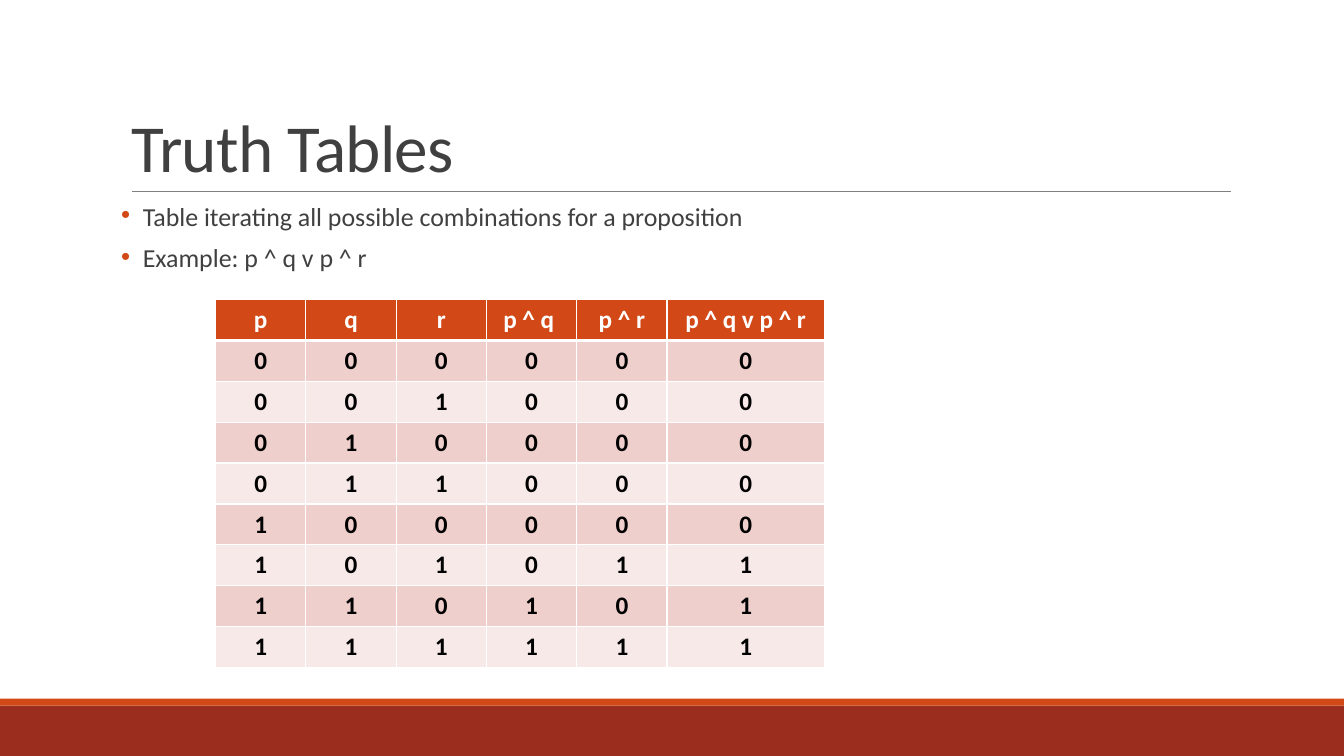
from itertools import product

from lxml import etree
from pptx import Presentation
from pptx.dml.color import RGBColor
from pptx.enum import shapes, text
from pptx.oxml import ns
from pptx.util import Pt

BRICK = RGBColor(0x9B, 0x2D, 0x1F)
ORANGE = RGBColor(0xD3, 0x48, 0x17)
GREY = RGBColor(0x80, 0x80, 0x80)
CHARCOAL = RGBColor(0x40, 0x40, 0x40)
DARK_BAND = RGBColor(0xEF, 0xCF, 0xCC)
LIGHT_BAND = RGBColor(0xF7, 0xE9, 0xE8)
WHITE = RGBColor(0xFF, 0xFF, 0xFF)
BLACK = RGBColor(0, 0, 0)

FONT = "Calibri"
PAGE_WIDTH, PAGE_HEIGHT = 960, 540
HEADINGS = ["p", "q", "r", "p ^ q ", "p ^ r", "p ^ q v p ^ r"]
POINTS = [
    "Table iterating all possible combinations for a proposition",
    "Example: p ^ q v p ^ r",
]


def add_span(para, words, size, color, bold=False):
    """Add one formatted run to a paragraph and return it."""
    span = para.add_run()
    span.text = words
    span.font.name = FONT
    span.font.size = Pt(size)
    span.font.bold = bold
    span.font.color.rgb = color
    return span


def add_child(parent, tag, **attributes):
    """Append a DrawingML element to a parent."""
    return etree.SubElement(parent, ns.qn(tag), attributes)


def place(holder, left, top, width, height):
    """Move a placeholder to a box given in points."""
    holder.left, holder.top = Pt(left), Pt(top)
    holder.width, holder.height = Pt(width), Pt(height)


def add_footer(page, left, top, width, height):
    """Draw the orange strip over the brick band at the foot of the page."""
    strip = 5
    bands = [(top + strip, height - strip, BRICK), (top, strip, ORANGE)]
    for band_top, band_height, color in bands:
        band = page.shapes.add_shape(
            shapes.MSO_SHAPE.RECTANGLE,
            Pt(left), Pt(band_top), Pt(width), Pt(band_height))
        band.shadow.inherit = False
        band.fill.solid()
        band.fill.fore_color.rgb = color
        band.line.fill.background()


def add_heading(page, left, top, width, height):
    """Fill the title and underline it along the bottom of its box."""
    title = page.shapes.title
    place(title, left, top, width, height)
    frame = title.text_frame
    frame.auto_size = text.MSO_AUTO_SIZE.NONE
    frame.vertical_anchor = text.MSO_ANCHOR.BOTTOM
    para = frame.paragraphs[0]
    para.alignment = text.PP_ALIGN.LEFT
    para.line_spacing = 0.85
    span = add_span(para, "Truth Tables", 48, CHARCOAL)
    span.font._element.set("spc", "-50")

    bottom = Pt(top + height)
    rule = page.shapes.add_connector(
        shapes.MSO_CONNECTOR.STRAIGHT,
        Pt(left + 8), bottom, Pt(left + width + 0.5), bottom)
    rule.line.color.rgb = GREY
    rule.line.width = Pt(0.5)
    add_child(rule._element.spPr, "a:effectLst")


def add_points(page, left, top, width, height):
    """Fill the body with the bulleted points."""
    body = page.placeholders[1]
    place(body, left, top, width, height)
    frame = body.text_frame
    frame.auto_size = text.MSO_AUTO_SIZE.NONE
    frame.vertical_anchor = text.MSO_ANCHOR.TOP
    frame.margin_left = frame.margin_right = 0
    frame.margin_top = frame.margin_bottom = Pt(3.6)
    for index, words in enumerate(POINTS):
        para = frame.add_paragraph() if index else frame.paragraphs[0]
        para.line_spacing = 0.7
        para.space_before, para.space_after = Pt(12), Pt(2)
        indent = Pt(15.5)
        properties = para._p.get_or_add_pPr()
        properties.set("marL", str(indent))
        properties.set("indent", str(-indent))
        bullet_color = add_child(properties, "a:buClr")
        add_child(bullet_color, "a:srgbClr", val=str(ORANGE))
        add_child(properties, "a:buChar", char="•")
        add_span(para, words, 18.5, CHARCOAL)


def style_cell(cell, words, fill, color, top_line, bottom_line):
    """Write a centred bold value in a filled cell with white borders."""
    properties = cell._tc.get_or_add_tcPr()
    widths = {"a:lnL": 1, "a:lnR": 1, "a:lnT": top_line, "a:lnB": bottom_line}
    for tag, width in widths.items():
        border = add_child(properties, tag, w=str(Pt(width)))
        solid = add_child(border, "a:solidFill")
        add_child(solid, "a:srgbClr", val=str(WHITE))
    cell.fill.solid()
    cell.fill.fore_color.rgb = fill
    para = cell.text_frame.paragraphs[0]
    para.alignment = text.PP_ALIGN.CENTER
    add_span(para, words, 18, color, bold=True)


def add_truth_table(page, left, top, width, height):
    """Build the table by evaluating the proposition for every p, q and r."""
    values = [(p, q, r, p & q, p & r, p & q | p & r)
              for p, q, r in product((0, 1), repeat=3)]
    rows = [HEADINGS] + values
    table = page.shapes.add_table(
        len(rows), len(HEADINGS),
        Pt(left), Pt(top), Pt(width), Pt(height)).table
    narrow = 64.5
    wide = width - narrow * (len(HEADINGS) - 1)
    for index, column in enumerate(table.columns):
        column.width = Pt(wide if index == len(HEADINGS) - 1 else narrow)
    for row, entries in enumerate(rows):
        table.rows[row].height = Pt(height / len(rows))
        fill = (DARK_BAND if row % 2 else LIGHT_BAND) if row else ORANGE
        color = BLACK if row else WHITE
        top_line = 3 if row == 1 else 1
        bottom_line = 1 if row else 3
        for column, entry in enumerate(entries):
            style_cell(table.cell(row, column), str(entry), fill, color,
                       top_line, bottom_line)


def main():
    """Build and save the one-page deck."""
    deck = Presentation()
    deck.slide_width, deck.slide_height = Pt(PAGE_WIDTH), Pt(PAGE_HEIGHT)
    page = deck.slides.add_slide(deck.slide_layouts[1])
    add_footer(page, 0, 499, PAGE_WIDTH, 41)
    add_heading(page, 86.5, 22.5, 792, 114)
    add_points(page, 86.5, 145.5, 490, 55)
    add_truth_table(page, 154, 214, 435, 261)
    deck.save("out.pptx")


if __name__ == "__main__":
    main()
